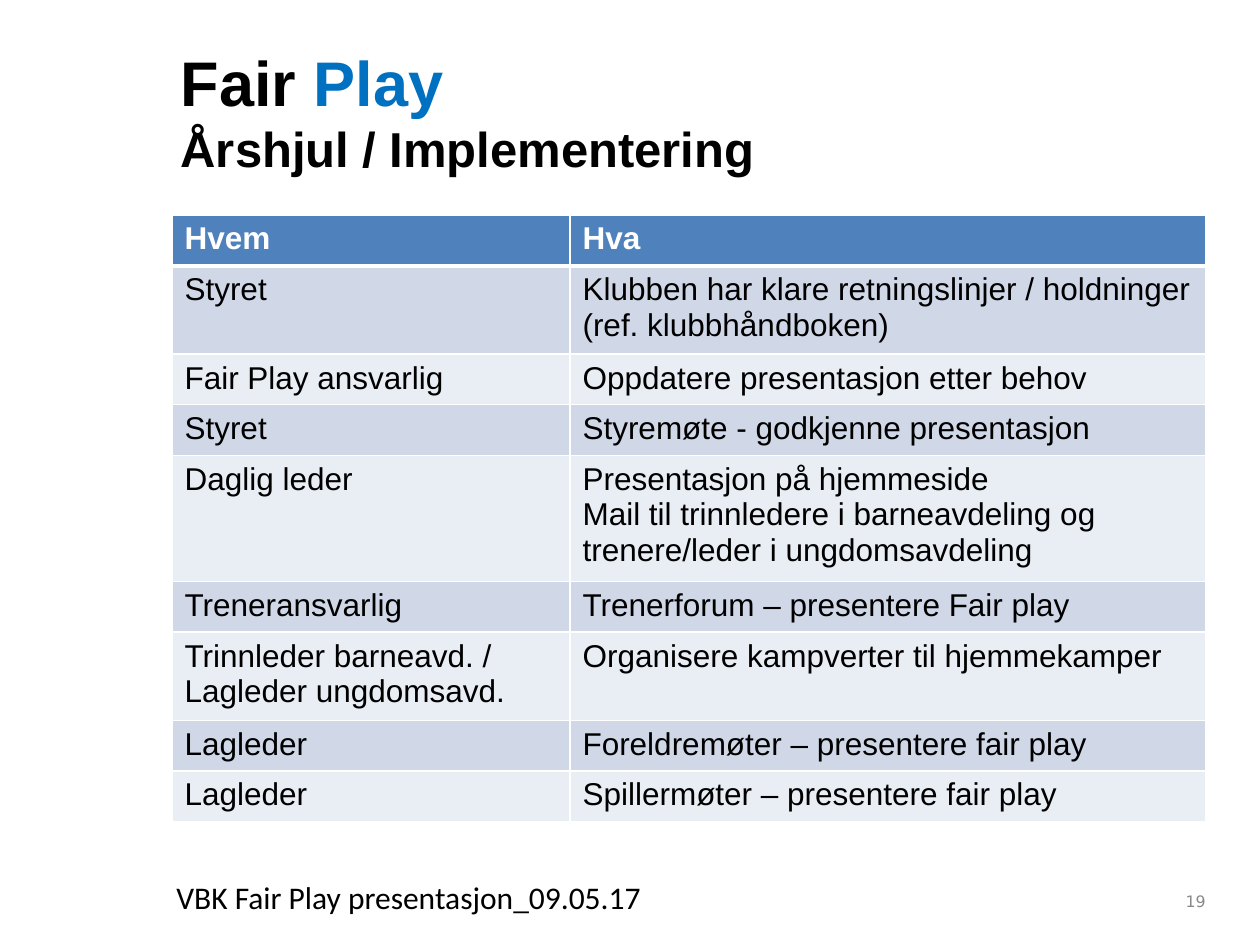
from typing import NamedTuple

from lxml import etree
from pptx import Presentation
from pptx.dml.color import RGBColor
from pptx.enum.text import MSO_ANCHOR, MSO_AUTO_SIZE, PP_ALIGN
from pptx.oxml.ns import qn
from pptx.util import Emu, Pt

PX = 914400 / 126

BLACK = RGBColor(0x00, 0x00, 0x00)
WHITE = RGBColor(0xFF, 0xFF, 0xFF)
GREY = RGBColor(0x89, 0x89, 0x89)
PLAY_BLUE = RGBColor(0x00, 0x70, 0xC0)
HEADER_BLUE = RGBColor(0x4F, 0x81, 0xBD)
BANDS = (RGBColor(0xE9, 0xED, 0xF4), RGBColor(0xD0, 0xD8, 0xE8))


class Box(NamedTuple):
    left: int
    top: int
    width: int
    height: int


class TextStyle(NamedTuple):
    size: int
    color: RGBColor
    name: str = "Arial"
    bold: bool = False


class Duty(NamedTuple):
    height: int
    who: str
    what: str


TITLE_BOX = Box(168, 32, 898, 157)
TABLE_BOX = Box(172, 215, 1034, 581)
FOOTER_BOX = Box(164, 872, 655, 50)
NUMBER_BOX = Box(924, 876, 294, 50)
COLUMN_WIDTHS = (398, 636)

TITLE_RUNS = (
    ("Fair ", TextStyle(36, BLACK, bold=True)),
    ("Play", TextStyle(36, PLAY_BLUE, bold=True)),
    ("\n", None),
    ("Årshjul / Implementering", TextStyle(28, BLACK, bold=True)),
)
HEADER_STYLE = TextStyle(18, WHITE, bold=True)
BODY_STYLE = TextStyle(18, BLACK)

DUTIES = (
    Duty(51, "Hvem", "Hva"),
    Duty(83, "Styret", "Klubben har klare retningslinjer / holdninger (ref. klubbhåndboken)"),
    Duty(48, "Fair Play ansvarlig", "Oppdatere presentasjon etter behov"),
    Duty(51, "Styret", "Styremøte - godkjenne presentasjon"),
    Duty(119, "Daglig leder", "Presentasjon på hjemmeside\n"
         "Mail til trinnledere i barneavdeling og trenere/leder i ungdomsavdeling"),
    Duty(50, "Treneransvarlig", "Trenerforum – presentere Fair play"),
    Duty(83, "Trinnleder barneavd. /\nLagleder ungdomsavd.",
         "Organisere kampverter til hjemmekamper"),
    Duty(48, "Lagleder", "Foreldremøter – presentere fair play"),
    Duty(48, "Lagleder", "Spillermøter – presentere fair play"),
)


def px(length: int) -> Emu:
    return Emu(round(length * PX))


def apply_style(font, style: TextStyle) -> None:
    formats = {"name": style.name, "size": Pt(style.size), "bold": style.bold}
    for attribute, value in formats.items():
        setattr(font, attribute, value)
    font.color.rgb = style.color


def place(shape, box: Box) -> None:
    for attribute, length in box._asdict().items():
        setattr(shape, attribute, px(length))


def add_title(slide) -> None:
    title = slide.shapes.title
    place(title, TITLE_BOX)
    frame = title.text_frame
    frame.auto_size = MSO_AUTO_SIZE.NONE
    frame.vertical_anchor = MSO_ANCHOR.MIDDLE
    paragraph = frame.paragraphs[0]
    paragraph.alignment = PP_ALIGN.LEFT
    for text, style in TITLE_RUNS:
        if style is None:
            paragraph.add_line_break()
            continue
        run = paragraph.add_run()
        run.text = text
        apply_style(run.font, style)


def add_label(slide, box: Box, text: str, style: TextStyle,
              alignment: PP_ALIGN, anchor: MSO_ANCHOR) -> None:
    frame = slide.shapes.add_textbox(*map(px, box)).text_frame
    frame.word_wrap = True
    frame.vertical_anchor = anchor
    paragraph = frame.paragraphs[0]
    paragraph.alignment = alignment
    run = paragraph.add_run()
    run.text = text
    apply_style(run.font, style)


def add_borders(cell, top: int, bottom: int) -> None:
    """Draw white cell borders; top and bottom are widths in points."""
    properties = cell._tc.get_or_add_tcPr()
    for side, width in {"lnL": 1, "lnR": 1, "lnT": top, "lnB": bottom}.items():
        line = etree.SubElement(properties, qn(f"a:{side}"), w=str(Pt(width)))
        fill = etree.SubElement(line, qn("a:solidFill"))
        etree.SubElement(fill, qn("a:srgbClr"), val=str(WHITE))


def fill_cell(cell, text: str, row_index: int) -> None:
    is_header = row_index == 0
    add_borders(cell, top=3 if row_index == 1 else 1, bottom=3 if is_header else 1)
    cell.fill.solid()
    cell.fill.fore_color.rgb = HEADER_BLUE if is_header else BANDS[row_index % 2]
    cell.text = text
    for paragraph in cell.text_frame.paragraphs:
        for run in paragraph.runs:
            apply_style(run.font, HEADER_STYLE if is_header else BODY_STYLE)


def add_duty_table(slide) -> None:
    table = slide.shapes.add_table(
        len(DUTIES), len(COLUMN_WIDTHS), *map(px, TABLE_BOX)).table
    for column, width in zip(table.columns, COLUMN_WIDTHS):
        column.width = px(width)
    for row_index, duty in enumerate(DUTIES):
        row = table.rows[row_index]
        row.height = px(duty.height)
        for cell, text in zip(row.cells, (duty.who, duty.what)):
            fill_cell(cell, text, row_index)


def main() -> None:
    presentation = Presentation()
    presentation.slide_width = px(1260)
    presentation.slide_height = px(945)
    slide = presentation.slides.add_slide(presentation.slide_layouts[5])
    add_label(slide, NUMBER_BOX, "19", TextStyle(9, GREY, "DejaVu Sans"),
              PP_ALIGN.RIGHT, MSO_ANCHOR.MIDDLE)
    add_duty_table(slide)
    add_title(slide)
    add_label(slide, FOOTER_BOX, "VBK Fair Play presentasjon_09.05.17",
              TextStyle(18, BLACK, "Calibri"), PP_ALIGN.LEFT, MSO_ANCHOR.TOP)
    presentation.save("out.pptx")


if __name__ == "__main__":
    main()
